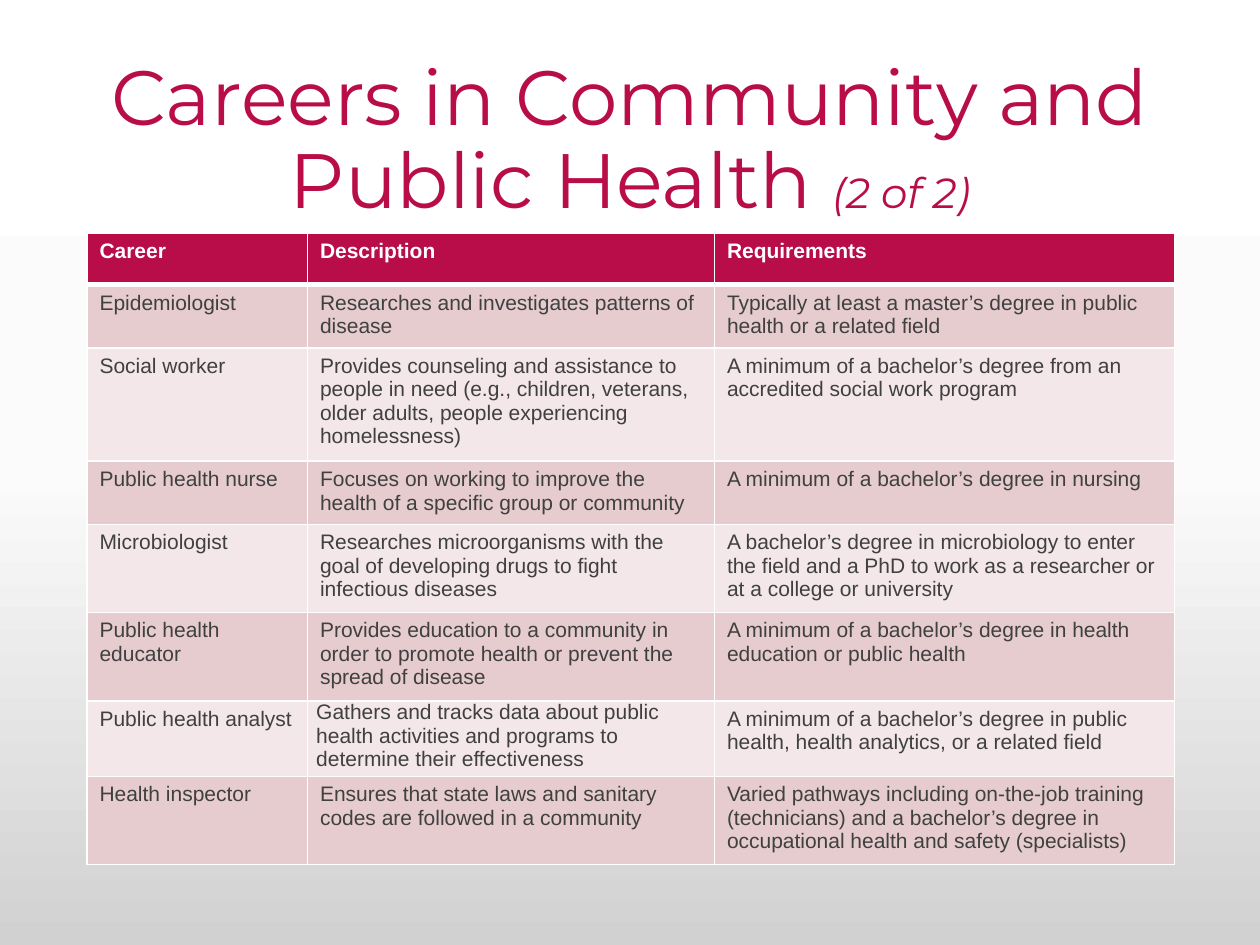
from copy import deepcopy

from pptx import Presentation
from pptx.dml.color import RGBColor
from pptx.enum import text
from pptx.oxml import parse_xml
from pptx.oxml.ns import nsdecls, qn
from pptx.util import Inches, Pt

# Content
TITLE = [
    ("Careers in Community and Public Health ", {"size": Pt(44)}),
    ("(2 of 2)", {"size": Pt(24), "italic": True}),
]
HEADER = ("Career", "Description", "Requirements")
CAREERS = [
    ("Epidemiologist",
     "Researches and investigates patterns of disease",
     "Typically at least a master’s degree in public health or a related field"),
    ("Social worker",
     "Provides counseling and assistance to people in need (e.g., children, veterans, "
     "older adults, people experiencing homelessness)",
     "A minimum of a bachelor’s degree from an accredited social work program"),
    ("Public health nurse",
     "Focuses on working to improve the health of a specific group or community",
     "A minimum of a bachelor’s degree in nursing"),
    ("Microbiologist",
     "Researches microorganisms with the goal of developing drugs to fight "
     "infectious diseases",
     "A bachelor’s degree in microbiology to enter the field and a PhD to work as "
     "a researcher or at a college or university"),
    ("Public health educator",
     "Provides education to a community in order to promote health or prevent the "
     "spread of disease",
     "A minimum of a bachelor’s degree in health education or public health"),
    ("Public health analyst",
     "Gathers and tracks data about public health activities and programs to "
     "determine their effectiveness",
     "A minimum of a bachelor’s degree in public health, health analytics, or a "
     "related field"),
    ("Health inspector",
     "Ensures that state laws and sanitary codes are followed in a community",
     "Varied pathways including on-the-job training (technicians) and a bachelor’s "
     "degree in occupational health and safety (specialists)"),
]
TIGHT_CELL = (6, 1)  # row, column with narrow margins

# Layout and colours
LEFT, WIDTH = 0.69, 8.62
COLS, ROW_H = (1.75, 3.23, 3.65), 0.41
CRIMSON, INK, WHITE = "B80D48", "3F403F", "FFFFFF"
BANDS = ("E6CCCF", "F3E7E9")
BACKGROUND = [(0, "FFFFFF"), (0.5, "FBFBFB"), (1, "D1D1D1")]


def rgb(value):
    return RGBColor.from_string(value)


def apply(obj, values):
    for name, value in values.items():
        setattr(obj, name, value)


def add_run(p, words, color, **font):
    r = p.add_run()
    r.text = words
    apply(r.font, font)
    r.font.color.rgb = rgb(color)


def set_borders(cell, **widths):
    tc_pr = cell._tc.get_or_add_tcPr()
    for i, (side, width) in enumerate(widths.items()):
        tc_pr.insert(i, parse_xml(
            f'<a:{side} {nsdecls("a")} w="{Pt(width)}"><a:solidFill>'
            f'<a:srgbClr val="{WHITE}"/></a:solidFill></a:{side}>'))


def set_background(s):
    fill = s.background.fill
    fill.gradient()
    fill.gradient_angle = 270
    stops = s._element.find(".//" + qn("a:gsLst"))
    stops.insert(1, deepcopy(stops[0]))
    for stop, (position, color) in zip(fill.gradient_stops, BACKGROUND):
        stop.position = position
        stop.color.rgb = rgb(color)


def add_title(s):
    box = s.shapes.add_textbox(Inches(LEFT), Inches(0.4), Inches(WIDTH), Inches(1.45))
    tf = box.text_frame
    apply(tf, {"word_wrap": True, "vertical_anchor": text.MSO_ANCHOR.MIDDLE})
    p = tf.paragraphs[0]
    apply(p, {"alignment": text.PP_ALIGN.CENTER, "line_spacing": 0.9})
    for words, font in TITLE:
        add_run(p, words, CRIMSON, name="Montserrat", **font)


def add_careers(s):
    rows = [HEADER, *CAREERS]
    table = s.shapes.add_table(len(rows), len(COLS), Inches(LEFT), Inches(1.85),
                               Inches(WIDTH), Inches(ROW_H * len(rows))).table
    for column, width in zip(table.columns, COLS):
        column.width = Inches(width)
    for i, row in enumerate(rows):
        table.rows[i].height = Inches(ROW_H)
        head = i == 0
        for j, words in enumerate(row):
            cell = table.cell(i, j)
            cell.fill.solid()
            cell.fill.fore_color.rgb = rgb(CRIMSON if head else BANDS[(i - 1) % 2])
            set_borders(cell, lnL=1, lnR=1, lnT=3 if i == 1 else 1, lnB=3 if head else 1)
            if (i, j) == TIGHT_CELL:
                apply(cell, {"margin_left": Inches(0.07), "margin_right": Inches(0.07),
                             "margin_top": 0, "margin_bottom": 0})
            add_run(cell.text_frame.paragraphs[0], words, WHITE if head else INK,
                    name="Arial", size=Pt(12), bold=head)


def main():
    prs = Presentation()
    apply(prs, {"slide_width": Inches(10), "slide_height": Inches(7.5)})
    s = prs.slides.add_slide(prs.slide_layouts[6])
    set_background(s)
    add_title(s)
    add_careers(s)
    prs.save("out.pptx")


if __name__ == "__main__":
    main()
